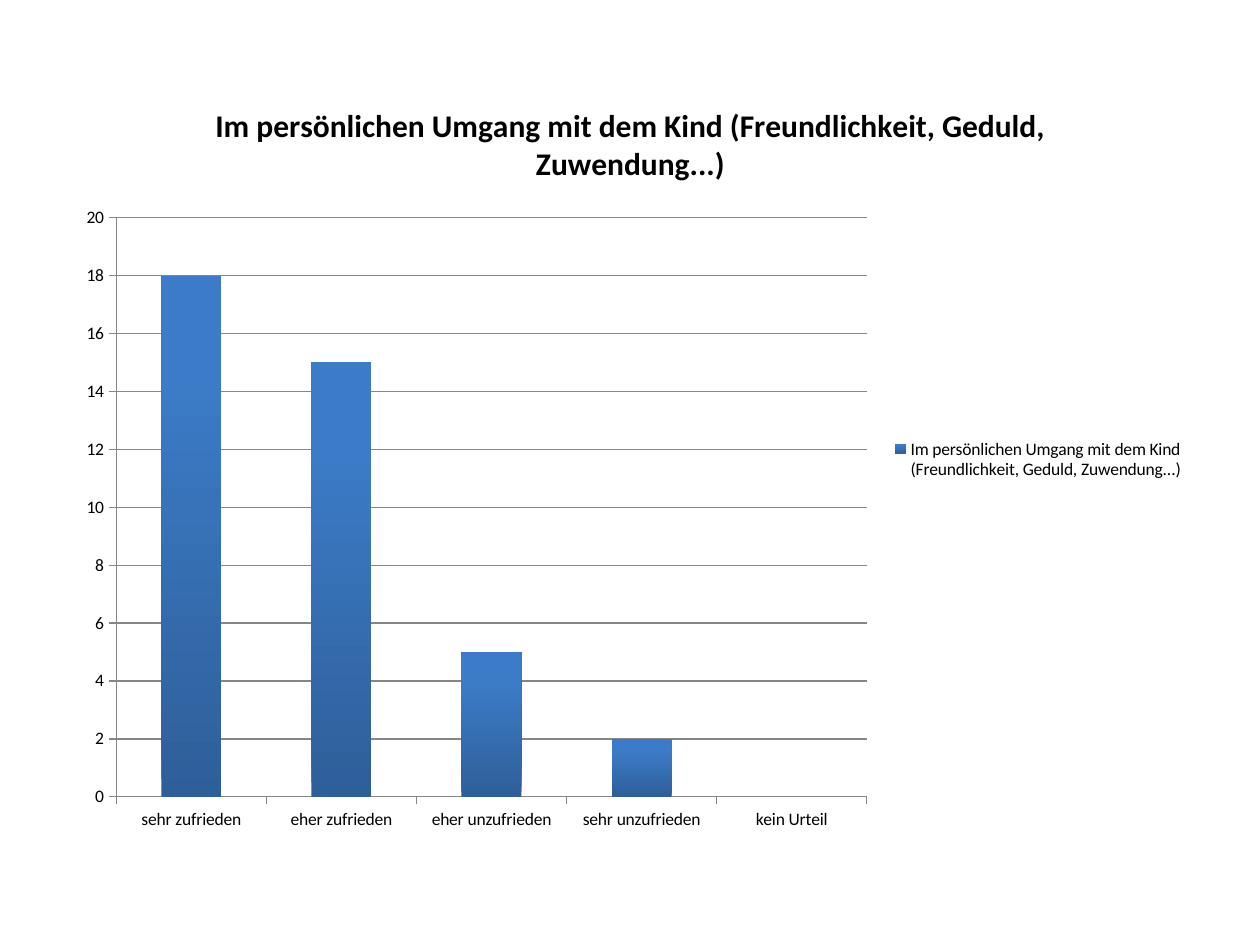
from pptx import Presentation
from pptx.chart.data import CategoryChartData
from pptx.dml.color import RGBColor
from pptx.enum.chart import XL_CHART_TYPE, XL_LEGEND_POSITION, XL_TICK_MARK
from pptx.util import Pt

BLACK = RGBColor(0x00, 0x00, 0x00)
GREY = RGBColor(0x86, 0x86, 0x86)
DARK_BLUE = RGBColor(0x2E, 0x5F, 0x99)
LIGHT_BLUE = RGBColor(0x3C, 0x7B, 0xC7)

FONT = "Calibri"
QUESTION = "Im persönlichen Umgang mit dem Kind (Freundlichkeit, Geduld, Zuwendung...)"
ANSWERS = {
    "sehr zufrieden": 18,
    "eher zufrieden": 15,
    "eher unzufrieden": 5,
    "sehr unzufrieden": 2,
    "kein Urteil": 0,
}


def format_font(font, size, bold=False):
    font.name = FONT
    font.size = Pt(size)
    font.bold = bold
    font.color.rgb = BLACK


def set_title(chart, text, size, bold):
    chart.has_title = True
    para = chart.chart_title.text_frame.paragraphs[0]
    span = para.add_run()
    span.text = text
    format_font(span.font, size, bold)
    chart.chart_title.include_in_layout = False


def format_line(line):
    line.color.rgb = GREY
    line.width = Pt(0.75)


def format_axis(axis):
    axis.major_tick_mark = XL_TICK_MARK.OUTSIDE
    axis.minor_tick_mark = XL_TICK_MARK.NONE
    format_line(axis.format.line)


def shade_bars(plot):
    """Fill the bars with a gradient that gets lighter from bottom to top."""
    fill = plot.series[0].format.fill
    fill.gradient()
    fill.gradient_angle = 90
    for stop, color, position in zip(
        fill.gradient_stops, (DARK_BLUE, LIGHT_BLUE), (0, 0.8)
    ):
        stop.color.rgb = color
        stop.position = position


def add_answer_chart(page):
    data = CategoryChartData()
    data.categories = ANSWERS.keys()
    data.add_series(QUESTION, ANSWERS.values())
    chart = page.shapes.add_chart(
        XL_CHART_TYPE.COLUMN_CLUSTERED, Pt(36.5), Pt(43), Pt(647.5), Pt(439.5), data
    ).chart
    format_font(chart.font, 10)
    set_title(chart, QUESTION, size=18, bold=True)

    chart.has_legend = True
    chart.legend.position = XL_LEGEND_POSITION.RIGHT
    chart.legend.include_in_layout = False

    format_axis(chart.category_axis)
    format_axis(chart.value_axis)
    chart.value_axis.minimum_scale = 0
    chart.value_axis.maximum_scale = 20
    chart.value_axis.major_unit = 2
    format_line(chart.value_axis.major_gridlines.format.line)

    plot = chart.plots[0]
    plot.gap_width = 150
    plot.vary_by_categories = False
    shade_bars(plot)


def main():
    deck = Presentation()
    deck.slide_width, deck.slide_height = Pt(720), Pt(540)
    page = deck.slides.add_slide(deck.slide_layouts[6])
    add_answer_chart(page)
    deck.save("out.pptx")


if __name__ == "__main__":
    main()
